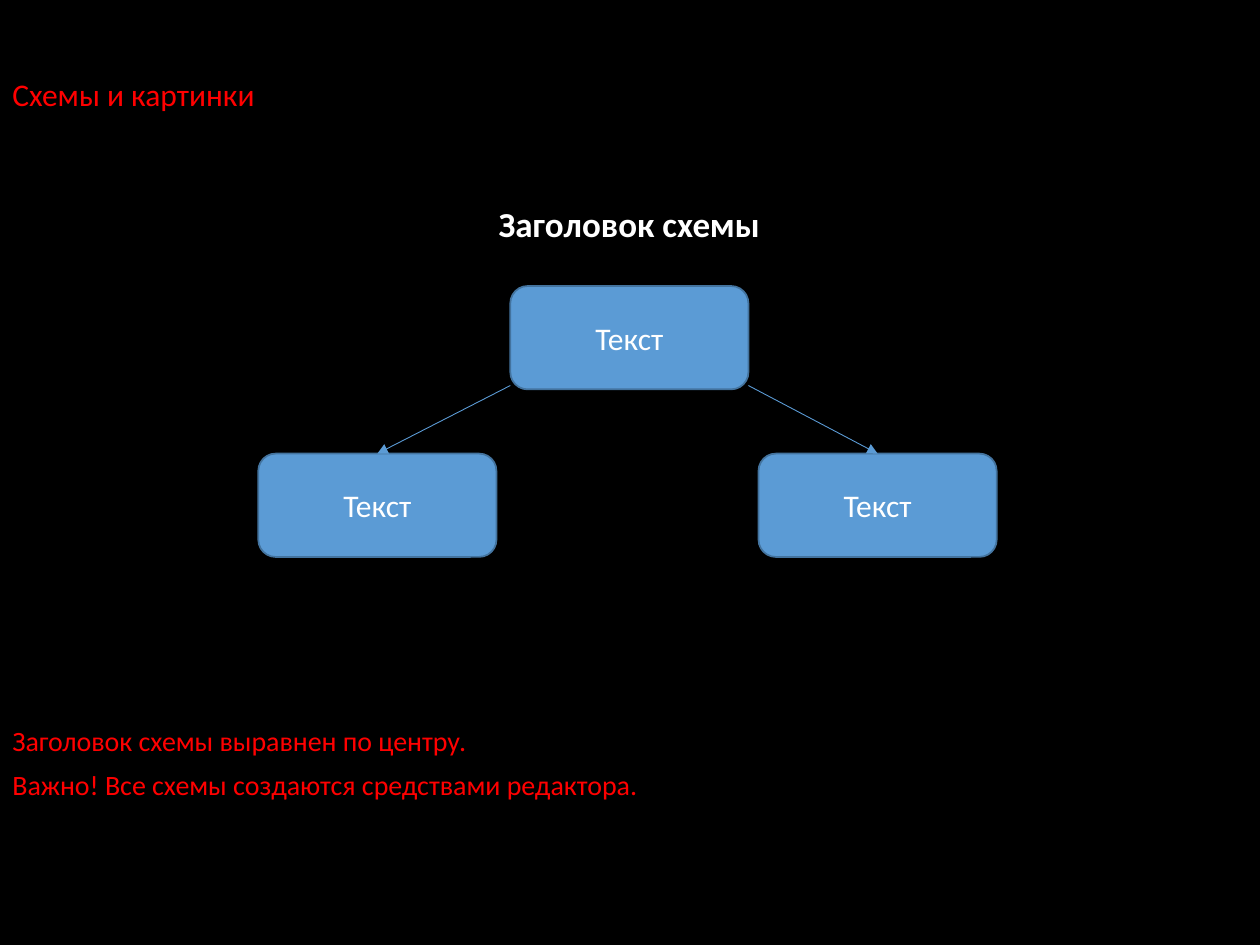
from pptx import Presentation
from pptx.dml.color import RGBColor
from pptx.enum.shapes import MSO_CONNECTOR as Connector, MSO_SHAPE as Shape
from pptx.enum.text import MSO_ANCHOR as Anchor, MSO_AUTO_SIZE as AutoSize, PP_ALIGN as Align
from pptx.oxml.ns import qn
from pptx.util import Inches, Pt
from lxml.etree import SubElement

BLACK = RGBColor(0x00, 0x00, 0x00)
WHITE = RGBColor(0xFF, 0xFF, 0xFF)
RED = RGBColor(0xFF, 0x00, 0x00)
BLUE = RGBColor(0x5B, 0x9B, 0xD5)
DARK_BLUE = RGBColor(0x43, 0x73, 0x9E)


def write_text(frame, text, size=18, color=WHITE, bold=False, align=Align.LEFT, before=0):
    frame.word_wrap = True
    for index, line in enumerate(text.split("\n")):
        para = frame.paragraphs[0] if index == 0 else frame.add_paragraph()
        para.alignment = align
        para.space_before = Pt(before)
        span = para.add_run()
        span.text = line
        span.font.name = "Calibri"
        span.font.size = Pt(size)
        span.font.bold = bold
        span.font.color.rgb = color


class SchemePage:
    """Hold the scheme style and the current slide."""

    node_width = Inches(1.89)
    node_height = Inches(0.82)

    def __init__(self, deck):
        self.page = deck.slides.add_slide(deck.slide_layouts[6])
        fill = self.page.background.fill
        fill.solid()
        fill.fore_color.rgb = BLACK

    def label(self, text, left, top, width, height, **style):
        box = self.page.shapes.add_textbox(
            Inches(left), Inches(top), Inches(width), Inches(height))
        write_text(box.text_frame, text, **style)
        box.text_frame.auto_size = AutoSize.SHAPE_TO_FIT_TEXT

    def node(self, text, left, top):
        box = self.page.shapes.add_shape(
            Shape.ROUNDED_RECTANGLE, Inches(left), Inches(top),
            self.node_width, self.node_height)
        box.shadow.inherit = False
        box.fill.solid()
        box.fill.fore_color.rgb = BLUE
        box.line.color.rgb = DARK_BLUE
        box.line.width = Pt(1)
        box.text_frame.vertical_anchor = Anchor.MIDDLE
        write_text(box.text_frame, text, align=Align.CENTER)
        return box

    def arrow(self, left, top, target):
        arrow = self.page.shapes.add_connector(
            Connector.STRAIGHT, left, top, target.left, target.top)
        arrow.end_connect(target, 0)
        arrow.line.color.rgb = BLUE
        arrow.line.width = Pt(0.5)
        SubElement(arrow.line._get_or_add_ln(), qn("a:tailEnd"), type="triangle")
        SubElement(arrow._element.spPr, qn("a:effectLst"))


def main():
    deck = Presentation()
    deck.slide_width, deck.slide_height = Inches(10), Inches(7.5)
    scheme = SchemePage(deck)

    scheme.label("Схемы и картинки", 0, 0.55, 10, 0.4, color=RED)
    root = scheme.node("Текст", 4.05, 2.27)
    left_child, right_child = [scheme.node("Текст", left, 3.6) for left in (2.05, 6.02)]
    arrow_top = Inches(3.06)
    scheme.arrow(root.left + root.width, arrow_top, right_child)
    scheme.arrow(root.left, arrow_top, left_child)
    scheme.label("Заголовок схемы", 2.71, 1.56, 4.57, 0.44,
                 size=20, bold=True, align=Align.CENTER)
    scheme.label("Заголовок схемы выравнен по центру.\n"
                 "Важно! Все схемы создаются средствами редактора.",
                 0, 5.69, 10, 0.72, size=16, color=RED, before=6)

    deck.save("out.pptx")


if __name__ == "__main__":
    main()
